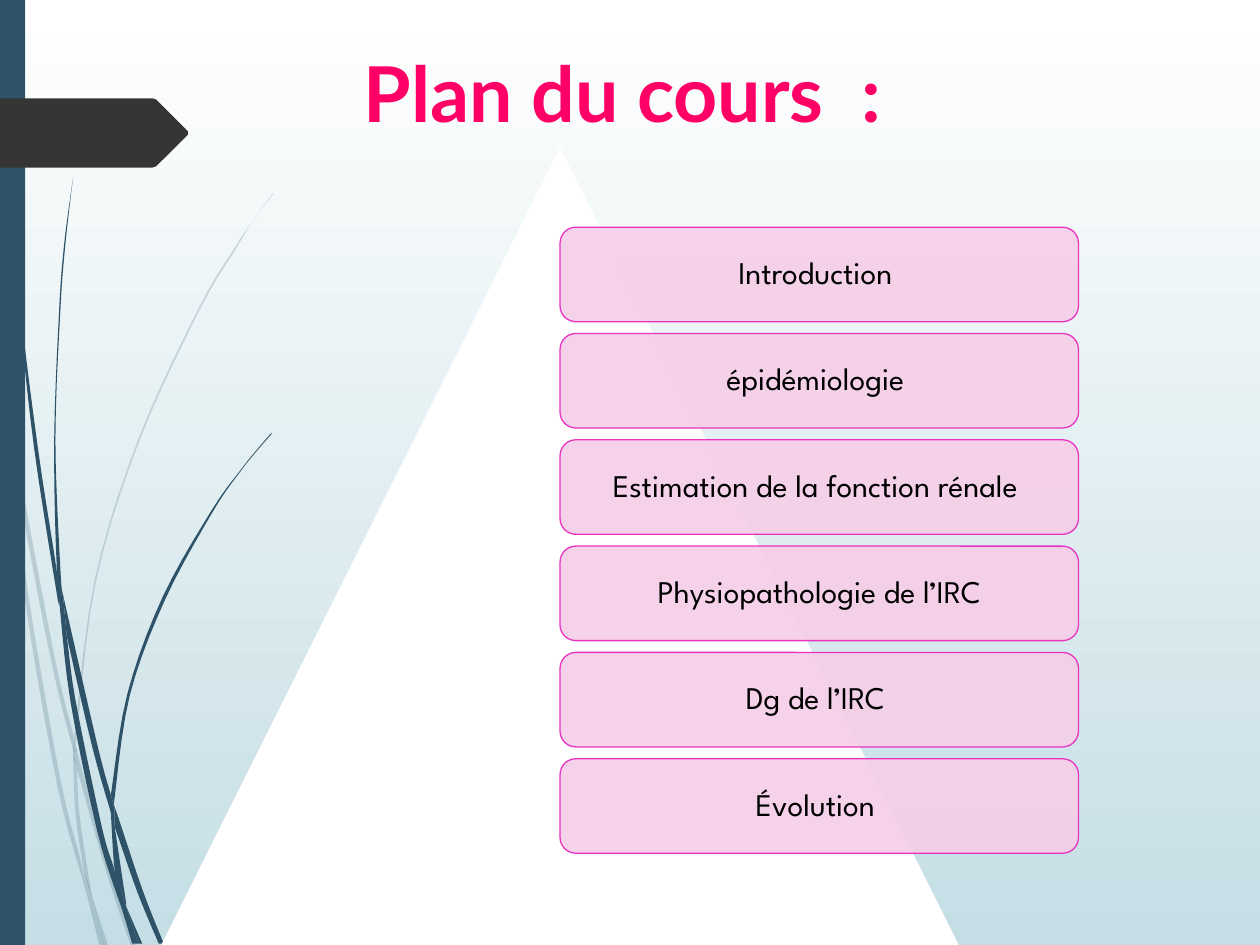
import pptx
import pptx.util
import pptx.dml.color
import pptx.enum.shapes
import pptx.enum.text
import pptx.oxml.ns
from lxml import etree

Inches = pptx.util.Inches
Shape = pptx.enum.shapes.MSO_SHAPE

COLORS = {
    "sky_top": "FFFFFF", "sky_bottom": "C5DEE5", "blade": "2E5369",
    "tag": "353535", "triangle": "FFFFFF", "box": "F6CEE8",
    "box_line": "E833BF", "text": "000000", "title": "FF0066",
}
TOPICS = ["Introduction ", "épidémiologie ", "Estimation de la fonction rénale ",
          "Physiopathologie de l’IRC", "Dg de l’IRC ", "Évolution "]

FAINT_BLADES = [
    ([(0, 2.82), (.06, 3.22), (.08, 3.5)], [(.07, 3.44), (0, 2.99)]),
    ([(.1, 3.45), (.43, 5.2), (.59, 5.86)], [(.59, 5.99), (.4, 5.22), (.12, 3.76)]),
    ([(.61, 5.96), (.64, 6.07), (.88, 6.92), (1.08, 7.51)],
     [(1.04, 7.51), (.85, 6.94), (.61, 6.1)]),
    ([(.73, 7.11), (.86, 7.51)], [(.83, 7.51)]),
    ([(.08, 3.5), (.12, 3.76), (.22, 4.69), (.48, 6.19), (.64, 6.83), (.7, 7.14)],
     [(.64, 6.93), (.45, 6.21), (.19, 4.7), (.08, 3.5)]),
    ([(.58, 5.99), (.6, 6.46), (.67, 6.92), (.73, 7.11)],
     [(.72, 7.06), (.63, 6.46), (.61, 6.1), (.58, 5.99)]),
    ([(2.17, 1.53), (2.01, 1.75), (1.86, 1.97), (1.58, 2.44), (1.1, 3.48), (.75, 4.61),
      (.59, 5.84)],
     [(.61, 5.96), (.61, 5.84), (.76, 4.62), (1.11, 3.49), (1.59, 2.45), (1.87, 1.98),
      (2.01, 1.75), (2.17, 1.54)]),
    ([(.7, 7.14), (.82, 7.51)], [(.79, 7.51)]),
    ([(.59, 5.86), (.58, 5.99), (.61, 6.08)], [(.61, 6.1), (.61, 5.96)]),
    ([(.65, 6.83), (.67, 6.92), (.73, 7.11), (.83, 7.51)], [(.82, 7.51), (.7, 7.14)]),
]
DARK_BLADES = [
    ([(.03, 0), (.04, .48), (.06, 1.09), (.15, 2.32), (.3, 3.55), (.45, 4.53), (.47, 4.81)],
     [(.46, 4.77), (.27, 3.55), (.14, 2.33), (.05, 1.1), (.03, .48), (.02, 0)]),
    ([(.5, 4.72), (.77, 5.9), (.88, 6.31)], [(.88, 6.45), (.73, 5.92), (.53, 5.05)]),
    ([(.91, 6.41), (.94, 6.49), (1.13, 7.06), (1.3, 7.49)],
     [(1.26, 7.49), (1.09, 7.08), (.91, 6.56)]),
    ([(.47, 4.77), (.53, 5.05), (.6, 5.56), (.81, 6.57), (.91, 6.91), (.97, 7.22)],
     [(.92, 7.08), (.77, 6.59), (.56, 5.57), (.47, 4.77)]),
    ([(.58, 1.41), (.51, 1.93), (.47, 2.45), (.43, 3.49), (.45, 4.49), (.49, 4.72)],
     [(.5, 4.72), (.48, 4.53), (.44, 3.49), (.48, 2.45), (.52, 1.93), (.58, 1.41)]),
    ([(1, 7.19), (1.13, 7.49)], [(1.1, 7.49)]),
    ([(.45, 4.49), (.47, 4.77), (.53, 5.05)], [(.5, 4.72), (.49, 4.72)]),
    ([(2.15, 3.44), (2.03, 3.58), (1.91, 3.73), (1.68, 4.05), (1.29, 4.74), (1.01, 5.51),
      (.88, 6.31)],
     [(.91, 6.41), (.91, 6.33), (1.03, 5.52), (1.31, 4.76), (1.69, 4.06), (1.91, 3.74),
      (2.03, 3.59), (2.16, 3.44)]),
    ([(.97, 7.22), (1.08, 7.49)], [(1.05, 7.49)]),
    ([(.88, 6.45), (.91, 6.91), (.96, 7.06), (1, 7.19)], [(1, 7.16), (.91, 6.56)]),
    ([(.88, 6.31), (.88, 6.45), (.91, 6.56)], [(.91, 6.41)]),
    ([(.91, 6.91), (.97, 7.22), (1.08, 7.49)], [(1.1, 7.49), (1, 7.19), (.96, 7.06)]),
]


def rgb(name):
    """Return the named colour."""
    return pptx.dml.color.RGBColor.from_string(COLORS[name])


def paint(shape, color, opacity=100, line=None):
    """Fill a shape and set its opacity and outline."""
    shape.shadow.inherit = False
    shape.fill.solid()
    shape.fill.fore_color.rgb = rgb(color)
    if opacity < 100:
        node = shape._element.spPr.find(".//" + pptx.oxml.ns.qn("a:srgbClr"))
        etree.SubElement(node, pptx.oxml.ns.qn("a:alpha"), val=str(opacity * 1000))
    if line:
        shape.line.color.rgb = rgb(line)
        shape.line.width = pptx.util.Pt(0.75)
    else:
        shape.line.fill.background()


def smooth(points, steps=5):
    """Return points along a Catmull-Rom curve through the given points."""
    padded = [points[0], *points, points[-1]]
    curve = [points[0]]
    for a, b, c, d in zip(padded, padded[1:], padded[2:], padded[3:]):
        for step in range(1, steps + 1):
            t = step / steps
            curve.append(tuple(
                (2 * q + (r - p) * t + (2 * p - 5 * q + 4 * r - s) * t ** 2
                 + (3 * q - p - 3 * r + s) * t ** 3) / 2
                for p, q, r, s in zip(a, b, c, d)))
    return curve


def add_outline(shapes, points, color, opacity=100):
    """Draw a closed filled outline from points in inches."""
    start, *rest = [(Inches(x), Inches(y)) for x, y in points]
    builder = shapes.build_freeform(*start, scale=1.0)
    builder.add_line_segments(rest, close=True)
    paint(builder.convert_to_shape(), color, opacity)


def add_blades(slide, blades, opacity):
    """Draw one group of grass blades."""
    group = slide.shapes.add_group_shape()
    for near_edge, far_edge in blades:
        add_outline(group.shapes, smooth(near_edge) + smooth(far_edge), "blade", opacity)


def add_side_decoration(slide, left, top, height):
    """Draw the grass, the side bar and the arrow tag."""
    add_blades(slide, FAINT_BLADES, 20)
    add_blades(slide, DARK_BLADES, 100)
    bar = slide.shapes.add_shape(Shape.RECTANGLE, Inches(left), Inches(top),
                                 Inches(0.2), Inches(height))
    paint(bar, "blade")
    tag = [(0, .78), (1.21, .78), (1.24, .79), (1.49, 1.04), (1.49, 1.07),
           (1.24, 1.32), (1.21, 1.33), (0, 1.33)]
    add_outline(slide.shapes, [(left + x, top + y) for x, y in tag], "tag")


def write(frame, text, font_name, size, color, bold=False):
    """Write one centred paragraph."""
    frame.word_wrap = True
    paragraph = frame.paragraphs[0]
    paragraph.text = text
    paragraph.alignment = pptx.enum.text.PP_ALIGN.CENTER
    paragraph.font.name = font_name
    paragraph.font.size = pptx.util.Pt(size)
    paragraph.font.bold = bold
    paragraph.font.color.rgb = rgb(color)
    return paragraph


def add_title(slide, left, top, width, height):
    """Place the slide title."""
    box = slide.shapes.add_textbox(Inches(left), Inches(top), Inches(width), Inches(height))
    write(box.text_frame, "Plan du cours  : ", "Lato", 44, "title", bold=True)


def add_topic_pyramid(slide, left, top, size):
    """Place the triangle and its column of topic boxes."""
    shapes = slide.shapes.add_group_shape().shapes
    triangle = shapes.add_shape(Shape.ISOSCELES_TRIANGLE, Inches(left), Inches(top),
                                Inches(size), Inches(size))
    paint(triangle, "triangle")
    box_height = 0.75
    pitch = box_height * 1.125
    for index, topic in enumerate(TOPICS):
        box = shapes.add_shape(Shape.ROUNDED_RECTANGLE, Inches(left + size / 2),
                               Inches(top + size / 10 + index * pitch),
                               Inches(size * 0.65), Inches(box_height))
        paint(box, "box", 90, "box_line")
        frame = box.text_frame
        frame.vertical_anchor = pptx.enum.text.MSO_ANCHOR.MIDDLE
        paragraph = write(frame, topic, "League Spartan", 18, "text")
        paragraph.line_spacing = 0.9


def set_background(slide):
    """Give the slide its vertical gradient."""
    fill = slide.background.fill
    fill.gradient()
    fill.gradient_angle = 270
    for stop, color in zip(fill.gradient_stops, ("sky_top", "sky_bottom")):
        stop.color.rgb = rgb(color)


def main():
    """Build and save the presentation."""
    presentation = pptx.Presentation()
    presentation.slide_width = Inches(10)
    presentation.slide_height = Inches(7.5)
    slide = presentation.slides.add_slide(presentation.slide_layouts[6])
    set_background(slide)
    add_side_decoration(slide, 0, 0, 7.5)
    add_topic_pyramid(slide, 1.28, 1.17, 6.33)
    add_title(slide, 1.41, 0.31, 7.21, 1.09)
    presentation.save("out.pptx")


if __name__ == "__main__":
    main()
